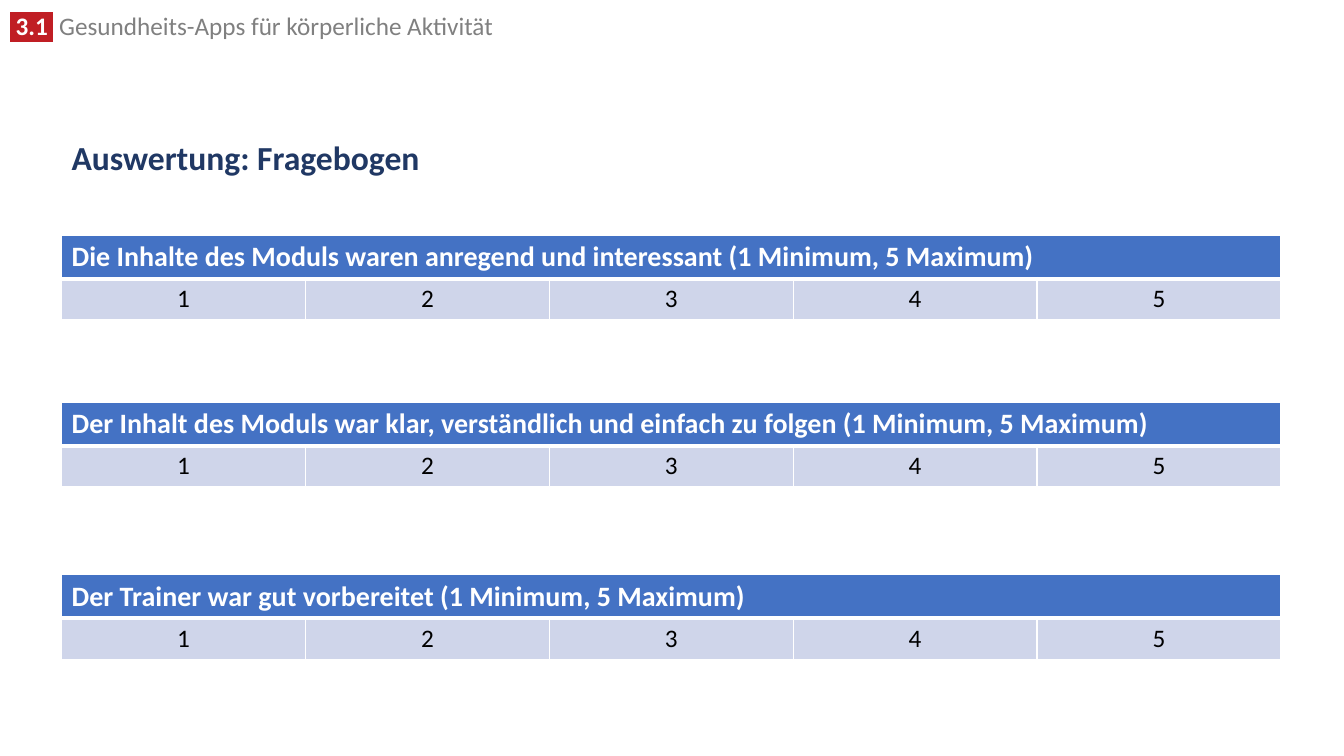
import pptx
import pptx.util
import pptx.dml.color
import pptx.enum.text
import pptx.oxml
import pptx.oxml.ns

Pt = pptx.util.Pt
Rgb = pptx.dml.color.RGBColor.from_string
Align = pptx.enum.text.PP_ALIGN
Anchor = pptx.enum.text.MSO_ANCHOR
NS = pptx.oxml.ns.nsdecls("a")

COLORS = {
    "white": "FFFFFF", "black": "000000", "red": "C01E24", "gray": "808080",
    "navy": "203864", "blue": "4472C4", "pale": "CFD5EA",
}


def write(par, text, size=18, color="black", bold=False, mark=None,
          align=None, space=None):
    """Add one formatted run to a paragraph."""
    run = par.add_run()
    run.text = text
    font = run.font
    font.size, font.bold = Pt(size), bold
    font.color.rgb = Rgb(COLORS[color])
    font.name = "Calibri"
    if mark:
        light = pptx.oxml.parse_xml(
            f'<a:highlight {NS}><a:srgbClr val="{COLORS[mark]}"/></a:highlight>')
        fill = run._r.rPr.find(pptx.oxml.ns.qn("a:solidFill"))
        fill.addnext(light)
    if align is not None:
        par.alignment = align
    if space:
        par.line_spacing = space


class Page:
    """The current slide and its style."""
    left, width = 44, 871

    def __init__(self, deck):
        self.slide = deck.slides.add_slide(deck.slide_layouts[6])

    def box(self, left, top, width, height, anchor=Anchor.TOP):
        frame = self.slide.shapes.add_textbox(
            Pt(left), Pt(top), Pt(width), Pt(height)).text_frame
        frame.word_wrap = True
        frame.vertical_anchor = anchor
        return frame.paragraphs[0]

    def cell(self, cell, fill, base=1):
        cell.fill.solid()
        cell.fill.fore_color.rgb = Rgb(COLORS[fill])
        # Borders come before the fill, in this order
        sides = {"lnL": 1, "lnR": 1, "lnT": 1, "lnB": base}
        for spot, (side, wide) in enumerate(sides.items()):
            line = pptx.oxml.parse_xml(
                f'<a:{side} {NS} w="{Pt(wide)}"><a:solidFill>'
                f'<a:srgbClr val="{COLORS["white"]}"/></a:solidFill></a:{side}>')
            cell._tc.get_or_add_tcPr().insert(spot, line)

    def scale(self, top, question, marks=5):
        table = self.slide.shapes.add_table(
            2, marks, Pt(self.left), Pt(top), Pt(self.width), Pt(60.4)).table
        table.rows[0].height, table.rows[1].height = Pt(31.2), Pt(29.2)
        for col in range(marks):
            table.columns[col].width = Pt(self.width / marks)
            self.cell(table.cell(0, col), "blue", base=3)
            mark = table.cell(1, col)
            self.cell(mark, "pale")
            write(mark.text_frame.paragraphs[0], str(col + 1),
                  align=Align.CENTER)
        head = table.cell(0, 0)
        head.merge(table.cell(0, marks - 1))
        write(head.text_frame.paragraphs[0],
              f"{question} (1 Minimum, {marks} Maximum)",
              size=20, color="white", bold=True)


def main():
    deck = pptx.Presentation()
    deck.slide_width, deck.slide_height = Pt(960), Pt(540)
    page = Page(deck)

    # Module header
    par = page.box(0, 8, 685, 25)
    write(par, " 3.1 ", color="white", bold=True, mark="red", space=0.8)
    write(par, " Gesundheits-Apps für körperliche Aktivität", color="gray")

    # Title
    par = page.box(page.left, 85, page.width, 57.6, Anchor.MIDDLE)
    write(par, "Auswertung: Fragebogen", size=24, color="navy", bold=True,
          space=0.9)

    # Rating scales
    for top, question in (
        (167.8, "Die Inhalte des Moduls waren anregend und interessant"),
        (287.3, "Der Inhalt des Moduls war klar, verständlich und einfach zu folgen"),
        (410.4, "Der Trainer war gut vorbereitet"),
    ):
        page.scale(top, question)

    deck.save("out.pptx")


if __name__ == "__main__":
    main()
